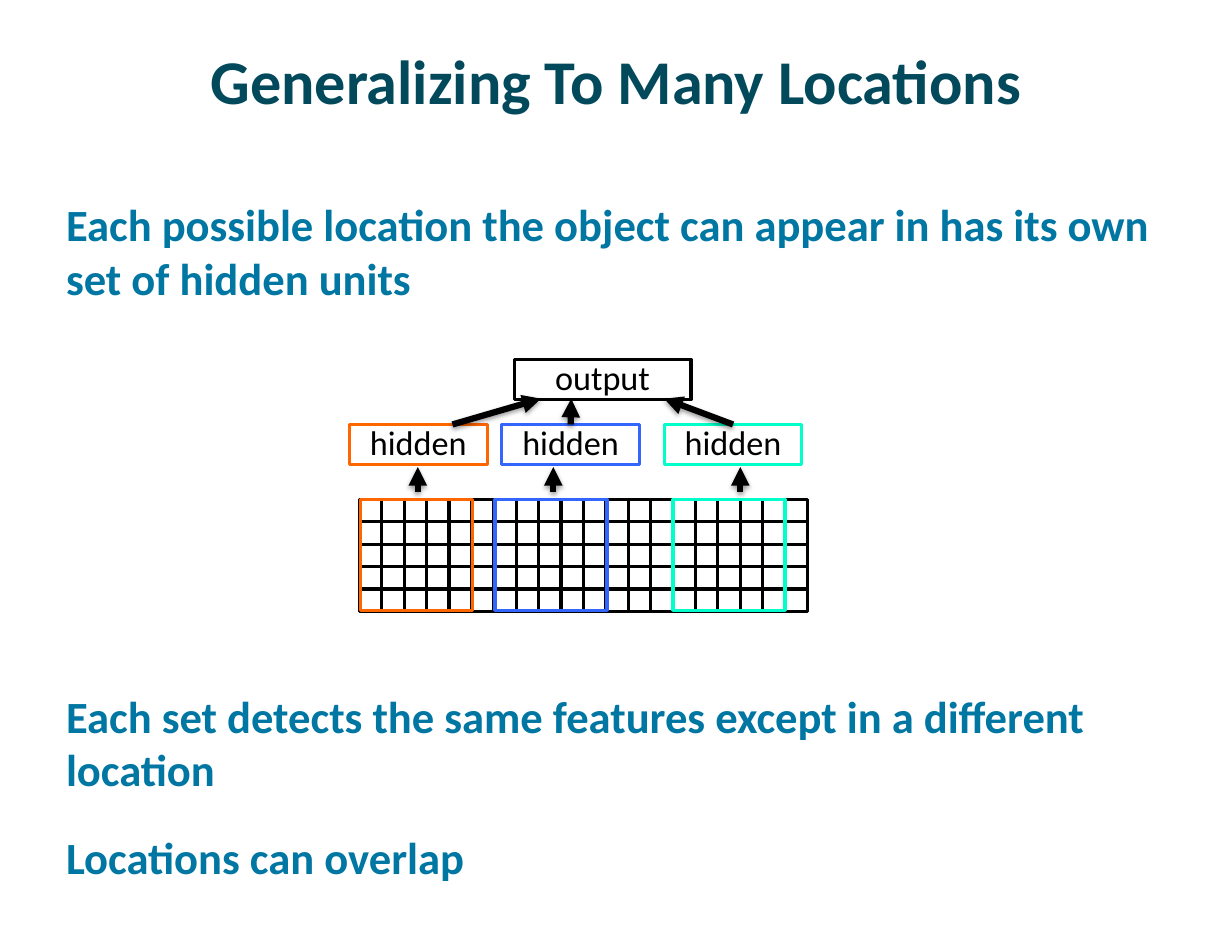
"""Build a slide on detecting an object at many locations with hidden units."""
import itertools

import lxml.etree
import pptx
import pptx.dml.color
import pptx.enum.shapes
import pptx.enum.text
import pptx.oxml
import pptx.oxml.ns
import pptx.util

Inches = pptx.util.Inches
Pt = pptx.util.Pt
RECT = pptx.enum.shapes.MSO_SHAPE.RECTANGLE
LINE = pptx.enum.shapes.MSO_CONNECTOR.STRAIGHT
MID = pptx.enum.text.MSO_ANCHOR.MIDDLE
TOP = pptx.enum.text.MSO_ANCHOR.TOP
LEFT = pptx.enum.text.PP_ALIGN.LEFT
MIDST = pptx.enum.text.PP_ALIGN.CENTER
SHADOW = (
    f"<a:effectLst {pptx.oxml.ns.nsdecls('a')}>"
    '<a:outerShdw blurRad="39370" dist="20320" dir="5400000" rotWithShape="0">'
    '<a:srgbClr val="000000"><a:alpha val="38000"/></a:srgbClr>'
    "</a:outerShdw></a:effectLst>"
)


def color(code):
    return pptx.dml.color.RGBColor.from_string(code)


class Painter:
    font = "Calibri"
    black, white = "000000", "FFFFFF"
    cell, side = 0.2, 5

    def __init__(self, slide):
        self.slide = slide

    def style(self, para, size, code, bold, align):
        para.alignment = align
        for run in para.runs:
            run.font.name = self.font
            run.font.size = Pt(size)
            run.font.bold = bold
            run.font.color.rgb = color(code)

    def text(self, box, lines, size, code, align=LEFT, anchor=TOP):
        frame = self.slide.shapes.add_textbox(*map(Inches, box)).text_frame
        frame.word_wrap = True
        frame.vertical_anchor = anchor
        frame.margin_left = frame.margin_right = Inches(0.11)
        frame.margin_top = frame.margin_bottom = Inches(0.06)
        frame.text = "\n".join(lines)
        for index, para in enumerate(frame.paragraphs):
            self.style(para, size, code, True, align)
            if index:
                para.space_before = Pt(22.1)

    def rect(self, box, line, fill=None, shapes=None):
        shape = (shapes or self.slide.shapes).add_shape(RECT, *map(Inches, box))
        shape.shadow.inherit = False
        shape.line.color.rgb = color(line)
        shape.line.width = Pt(2)
        if fill:
            shape.fill.solid()
            shape.fill.fore_color.rgb = color(fill)
        else:
            shape.fill.background()
        return shape

    def label(self, box, text, line):
        shape = self.rect(box, line, self.white)
        frame = shape.text_frame
        frame.vertical_anchor = MID
        frame.text = text
        para = frame.paragraphs[0]
        para.line_spacing = 0.87
        self.style(para, 22, self.black, False, MIDST)
        return shape

    def grid(self, left, top):
        group = self.slide.shapes.add_group_shape()
        for row, col in itertools.product(range(self.side), repeat=2):
            box = (left + col * self.cell, top + row * self.cell, self.cell, self.cell)
            self.rect(box, self.black, self.white, group.shapes)

    def arrow(self, start, end, source=None):
        link = self.slide.shapes.add_connector(LINE, *map(Inches, start + end))
        if source:
            link.begin_connect(source, 0)
        link.line.color.rgb = color(self.black)
        link.line.width = Pt(4)
        tag = pptx.oxml.ns.qn("a:tailEnd")
        lxml.etree.SubElement(link.line._get_or_add_ln(), tag, type="triangle")
        link._element.spPr.append(pptx.oxml.parse_xml(SHADOW))


def main():
    deck = pptx.Presentation()
    deck.slide_width, deck.slide_height = Inches(11), Inches(8.5)
    pen = Painter(deck.slides.add_slide(deck.slide_layouts[6]))

    pen.text((0.55, 0.19, 9.9, 1.04), ["Generalizing To Many Locations"],
             40, "03495C", MIDST, MID)
    pen.text((0.48, 1.7, 9.97, 1.1),
             ["Each possible location the object can appear in has its own set of hidden units"],
             28.7, "0076A3")
    pen.text((0.48, 6.09, 9.97, 1.9),
             ["Each set detects the same features except in a different location",
              "Locations can overlap"], 28.7, "0076A3")

    for block in range(4):
        pen.grid(3.21 + block, 4.46)

    pen.label((4.59, 3.21, 1.58, 0.36), "output", pen.black)
    units = [
        ("FF6600", 3.12, 3.22, 3.73, 4.04, 4.83),
        ("3366FF", 4.48, 4.42, 4.94, 5.1, 5.1),
        ("00FFCA", 5.93, 6.01, 6.61, 6.54, 5.93),
    ]
    for code, left, field, stem, start, end in units:
        unit = pen.label((left, 3.79, 1.23, 0.36), "hidden", code)
        pen.rect((field, 4.46, 1, 0.99), code)
        pen.arrow((stem, 4.39), (stem, 4.17))
        central = abs(start - left - 1.23 / 2) < 0.02
        pen.arrow((start, 3.79), (end, 3.56), unit if central else None)

    deck.save("out.pptx")


if __name__ == "__main__":
    main()
